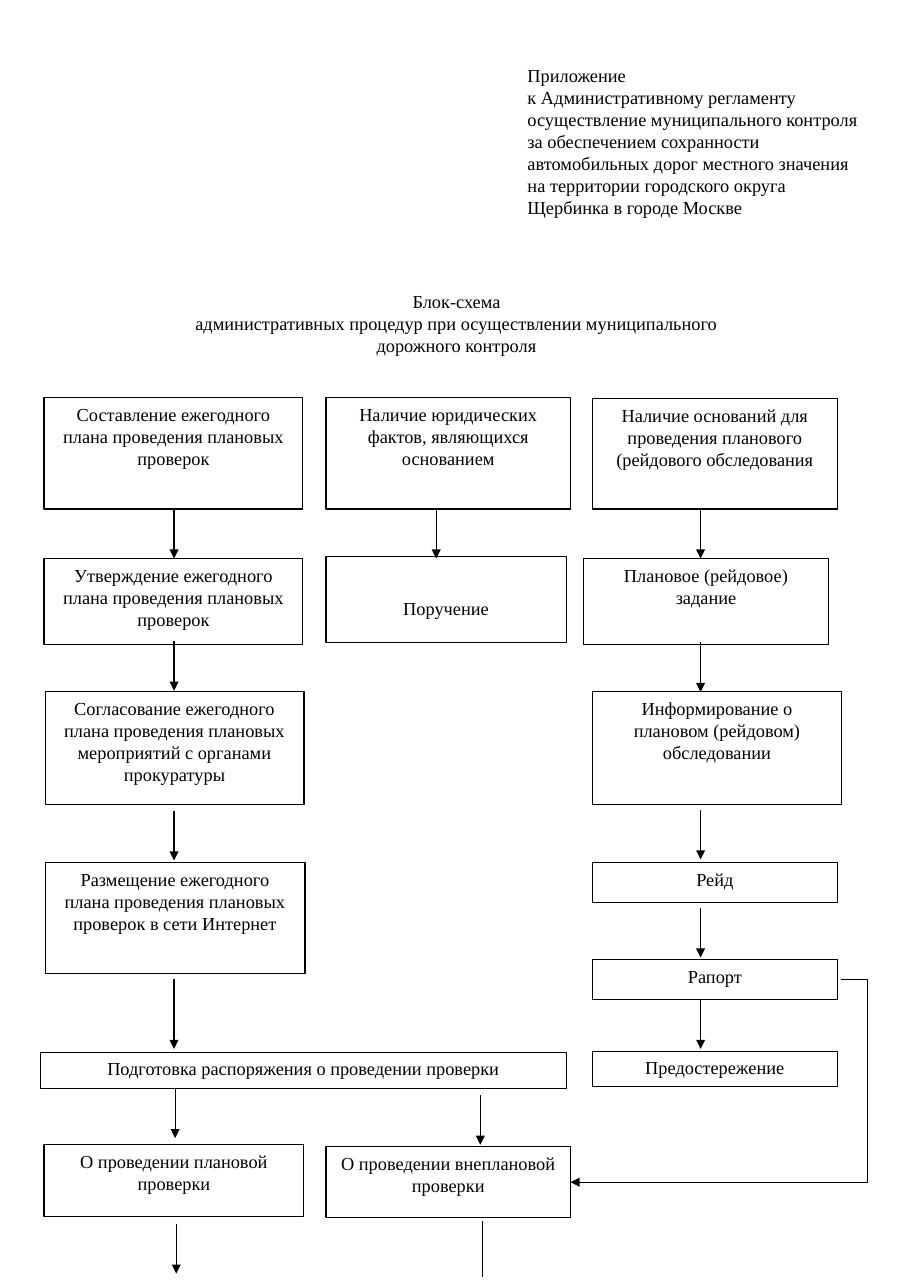
from dataclasses import dataclass

import pptx
import pptx.dml.color
import pptx.enum.shapes
import pptx.enum.text
import pptx.oxml.ns
import pptx.util
from lxml import etree
from pptx.util import Inches

COLORS = {"ink": "000000", "paper": "FFFFFF"}
FONT = "Times New Roman"
LEFT, MID, RIGHT = 0.4, 2.96, 5.38
WIDE, SLIM = 2.35, 2.22
AXIS, SIDE = 1.58, 6.36
STEP = 0.45

Align = pptx.enum.text.PP_ALIGN
Link = pptx.enum.shapes.MSO_CONNECTOR


@dataclass
class Box:
    text: str
    left: float
    top: float
    width: float
    height: float
    inset: float = 0.05


@dataclass
class Arrow:
    x: float
    top: float
    length: float = STEP
    weight: float = 0.75
    head: bool = True


BOXES = [
    Box("Составление ежегодного плана проведения плановых проверок", LEFT, 3.61, WIDE, 1.01),
    Box("Наличие юридических фактов, являющихся основанием", MID, 3.61, SLIM, 1.01),
    Box("Наличие оснований для проведения планового (рейдового обследования", RIGHT, 3.62, SLIM, 1),
    Box("Утверждение ежегодного плана проведения плановых проверок", LEFT, 5.07, WIDE, 0.78),
    Box("Поручение", MID, 5.05, 2.18, 0.78, inset=0.37),
    Box("Плановое (рейдовое) задание", 5.3, 5.07, SLIM, 0.78),
    Box("Согласование ежегодного плана проведения плановых мероприятий с органами прокуратуры",
        0.41, 6.28, WIDE, 1.02),
    Box("Информирование о плановом (рейдовом) обследовании", RIGHT, 6.28, 2.26, 1.02),
    Box("Размещение ежегодного плана проведения плановых проверок в сети Интернет",
        0.41, 7.83, 2.36, 1.01),
    Box("Рейд", RIGHT, 7.83, SLIM, 0.36),
    Box("Рапорт", RIGHT, 8.71, SLIM, 0.36),
    Box("Предостережение", RIGHT, 9.54, SLIM, 0.32),
    Box("Подготовка распоряжения о проведении проверки", 0.37, 9.55, 4.77, 0.33),
    Box("О проведении плановой проверки", LEFT, 10.39, 2.36, 0.65),
    Box("О проведении внеплановой проверки", MID, 10.41, SLIM, 0.64),
]

ARROWS = [
    Arrow(AXIS, 4.62), Arrow(3.96, 4.62), Arrow(SIDE, 4.62),
    Arrow(AXIS, 5.82), Arrow(SIDE, 5.83),
    Arrow(AXIS, 7.36), Arrow(SIDE, 7.35),
    Arrow(SIDE, 8.24), Arrow(SIDE, 9.07),
    Arrow(AXIS, 8.89, length=0.63),
    Arrow(1.59, 9.88), Arrow(4.36, 9.94),
    Arrow(1.6, 11.11),
    Arrow(4.38, 11.08, length=0.51, weight=1, head=False),
]

ANNEX = [
    "Приложение",
    "к Административному регламенту",
    "осуществление муниципального контроля",
    "за обеспечением сохранности автомобильных дорог местного значения "
    "на территории городского округа Щербинка в городе Москве",
]
TITLE = [
    "Блок-схема",
    "административных процедур при осуществлении муниципального дорожного контроля",
]


def color(name: str) -> pptx.dml.color.RGBColor:
    return pptx.dml.color.RGBColor.from_string(COLORS[name])


def write(shape, lines: list[str], *, align=Align.LEFT, after: float = 0,
          inset: float = 0.05, size: float = 12) -> None:
    """Fill a shape with one paragraph per line, set from the top."""
    frame = shape.text_frame
    frame.word_wrap = True
    frame.vertical_anchor = pptx.enum.text.MSO_ANCHOR.TOP
    frame.margin_top = Inches(inset)
    frame.text = "\n".join(lines)
    for para in frame.paragraphs:
        para.alignment = align
        para.space_after = pptx.util.Pt(after)
        para.font.name = FONT
        para.font.size = pptx.util.Pt(size)
        para.font.color.rgb = color("ink")


def add_note(slide, lines: list[str], left: float, top: float,
             width: float, height: float, align) -> None:
    note = slide.shapes.add_textbox(Inches(left), Inches(top), Inches(width), Inches(height))
    write(note, lines, align=align)


def add_box(slide, box: Box) -> None:
    shape = slide.shapes.add_shape(
        pptx.enum.shapes.MSO_SHAPE.RECTANGLE,
        Inches(box.left), Inches(box.top), Inches(box.width), Inches(box.height))
    shape.shadow.inherit = False
    shape.fill.solid()
    shape.fill.fore_color.rgb = color("paper")
    shape.line.color.rgb = color("ink")
    shape.line.width = pptx.util.Pt(0.75)
    write(shape, [box.text], align=Align.CENTER, after=8, inset=box.inset)


def add_link(slide, kind, start: tuple[float, float], end: tuple[float, float],
             weight: float, head: bool = True):
    link = slide.shapes.add_connector(kind, *map(Inches, start + end))
    link.line.color.rgb = color("ink")
    link.line.width = pptx.util.Pt(weight)
    if head:
        etree.SubElement(link.line._get_or_add_ln(), pptx.oxml.ns.qn("a:tailEnd"),
                         type="triangle")
    etree.SubElement(link._element.spPr, pptx.oxml.ns.qn("a:effectLst"))
    return link


def add_bend(slide) -> None:
    """Lead from the report round the right side to the unplanned check."""
    link = add_link(slide, Link.ELBOW, (7.64, 8.89), (5.18, 10.73), 0.5)
    shape = link._element.spPr.find(pptx.oxml.ns.qn("a:prstGeom"))
    guides = shape.get_or_add_avLst()
    etree.SubElement(guides, pptx.oxml.ns.qn("a:gd"), name="adj1", fmla="val -9500")


def main() -> None:
    deck = pptx.Presentation()
    deck.slide_width, deck.slide_height = Inches(8.27), Inches(11.69)
    slide = deck.slides.add_slide(deck.slide_layouts[6])
    add_note(slide, ANNEX, 4.69, 0.53, 3.31, 1.51, Align.LEFT)
    add_note(slide, TITLE, 1.58, 2.58, 5.13, 0.71, Align.CENTER)
    for box in BOXES:
        add_box(slide, box)
    for arrow in ARROWS:
        add_link(slide, Link.STRAIGHT, (arrow.x, arrow.top),
                 (arrow.x, arrow.top + arrow.length), arrow.weight, arrow.head)
    add_bend(slide)
    deck.save("out.pptx")


if __name__ == "__main__":
    main()
